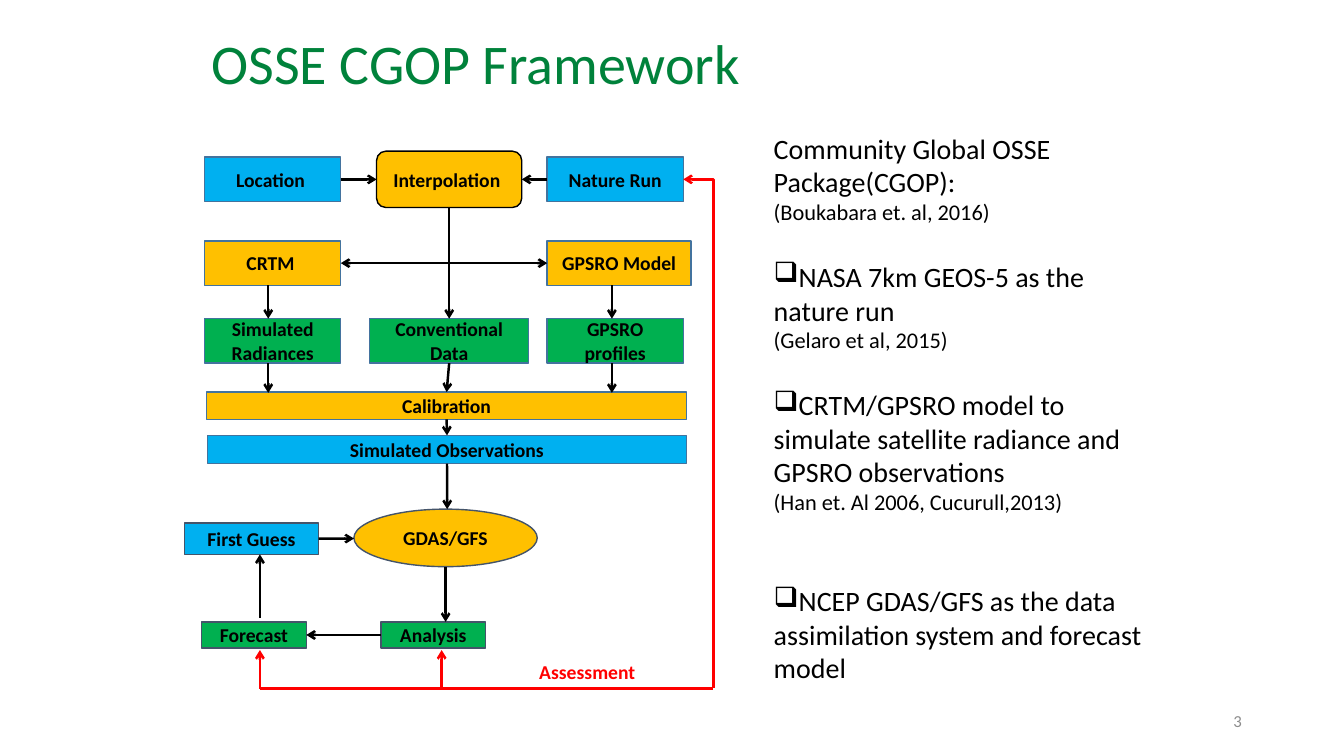
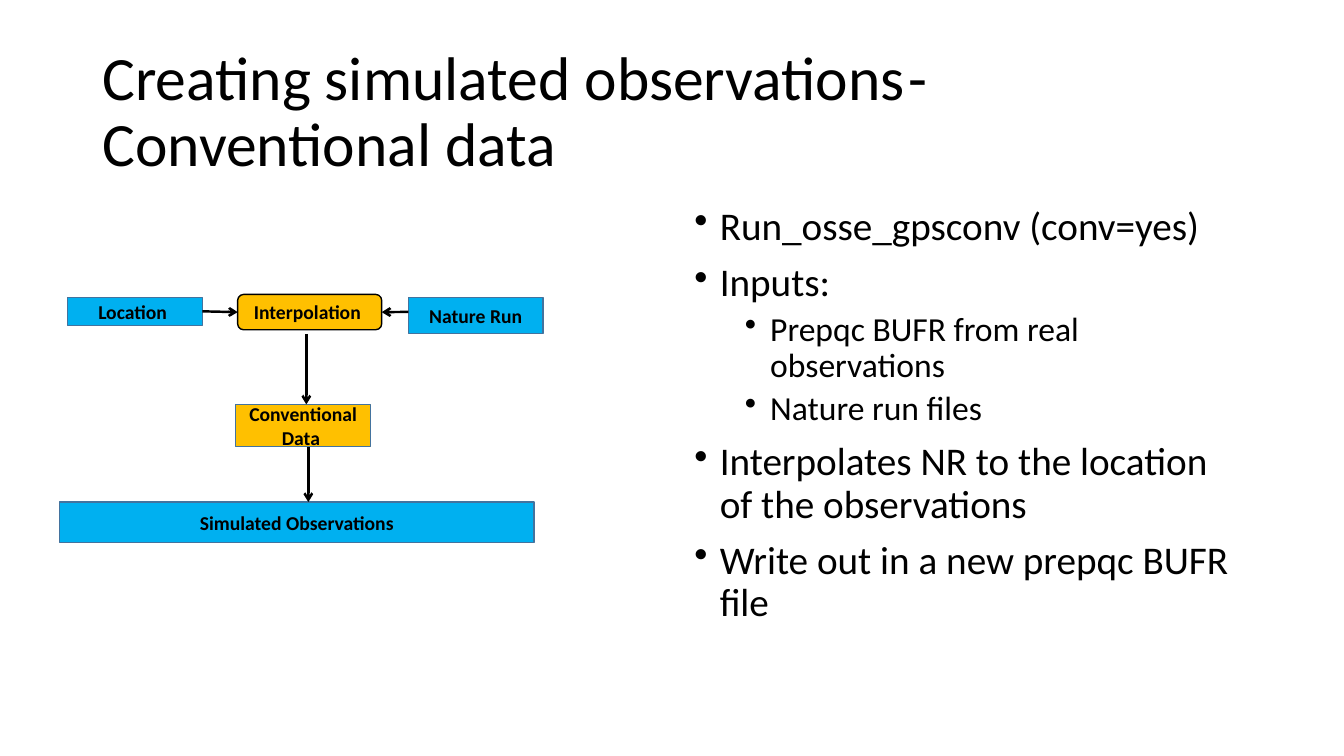
from dataclasses import dataclass
from typing import NamedTuple

from lxml import etree
from pptx import Presentation
from pptx.dml.color import RGBColor
from pptx.enum.shapes import MSO_CONNECTOR, MSO_SHAPE
from pptx.enum.text import MSO_ANCHOR, PP_ALIGN
from pptx.oxml.ns import qn
from pptx.shapes.autoshape import Shape
from pptx.shapes.connector import Connector
from pptx.slide import Slide
from pptx.text.text import TextFrame
from pptx.util import Cm, Pt

RECTANGLE = MSO_SHAPE.RECTANGLE
ROUNDED = MSO_SHAPE.ROUNDED_RECTANGLE
OVAL = MSO_SHAPE.OVAL
STRAIGHT = MSO_CONNECTOR.STRAIGHT
ELBOW = MSO_CONNECTOR.ELBOW
LEFT, CENTER, RIGHT = PP_ALIGN.LEFT, PP_ALIGN.CENTER, PP_ALIGN.RIGHT
TOP, MIDDLE = MSO_ANCHOR.TOP, MSO_ANCHOR.MIDDLE

FONT = "Calibri"
BLACK = "000000"
RED = "FF0000"
TITLE_GREEN = "00823B"
NUMBER_GRAY = "8C8C8C"
BLUE = "00B0F0"
AMBER = "FFC000"
GREEN = "00B050"
STEEL = "43739E"
SLATE = "44546A"

TOP_SIDE, LEFT_SIDE, BOTTOM_SIDE, RIGHT_SIDE = range(4)
BLANK_LAYOUT = 6
LABEL_SIZE = 14
EMPTY_LINE = 24.4  # height of one 20 pt line, in points


class Area(NamedTuple):
    """A place on the slide, in centimetres."""
    left: float
    top: float
    width: float
    height: float


class Point(NamedTuple):
    x: float
    y: float


class Joint(NamedTuple):
    """The middle of one side of a named box."""
    box: str
    side: int


@dataclass(frozen=True)
class TextLine:
    text: str
    size: float
    color: str = BLACK
    bold: bool = False
    alignment: PP_ALIGN = LEFT
    bullet: str = ""
    margin: float = 0
    hanging: float = 0
    space_before: float = 0
    line_spacing: float = 1.0


@dataclass(frozen=True)
class Box:
    label: str
    area: Area
    fill: str
    outline: str = STEEL
    kind: MSO_SHAPE = RECTANGLE


@dataclass(frozen=True)
class Link:
    start: Point | Joint
    end: Point | Joint
    color: str = BLACK
    start_arrow: bool = False
    end_arrow: bool = True
    kind: MSO_CONNECTOR = STRAIGHT


def rgb(color: str) -> RGBColor:
    return RGBColor.from_string(color)


def write_text(frame: TextFrame, lines: list[TextLine], anchor: MSO_ANCHOR) -> None:
    frame.word_wrap = True
    frame.vertical_anchor = anchor
    for index, line in enumerate(lines):
        paragraph = frame.add_paragraph() if index else frame.paragraphs[0]
        paragraph.text = line.text
        paragraph.alignment = line.alignment
        paragraph.line_spacing = line.line_spacing
        paragraph.space_before = Pt(line.space_before)
        paragraph.font.name = FONT
        paragraph.font.size = Pt(line.size)
        paragraph.font.bold = line.bold
        paragraph.font.color.rgb = rgb(line.color)
        if line.bullet:
            properties = paragraph._p.get_or_add_pPr()
            properties.set("marL", str(Cm(line.margin)))
            properties.set("indent", str(-Cm(line.hanging)))
            bullet = etree.Element(qn("a:buChar"), char=line.bullet)
            properties.insert_element_before(bullet, "a:tabLst", "a:defRPr", "a:extLst")


def add_text(slide: Slide, area: Area, lines: list[TextLine],
             anchor: MSO_ANCHOR = TOP) -> None:
    shape = slide.shapes.add_textbox(*map(Cm, area))
    write_text(shape.text_frame, lines, anchor)


def add_title(slide: Slide, area: Area, text: str, size: float, color: str) -> None:
    add_text(slide, area, [TextLine(text, size, color, line_spacing=0.9)], MIDDLE)


def add_box(slide: Slide, box: Box) -> Shape:
    shape = slide.shapes.add_shape(box.kind, *map(Cm, box.area))
    shape.shadow.inherit = False
    shape.fill.solid()
    shape.fill.fore_color.rgb = rgb(box.fill)
    shape.line.color.rgb = rgb(box.outline)
    shape.line.width = Pt(1)
    lines = [TextLine(text, LABEL_SIZE, bold=True, alignment=CENTER)
             for text in box.label.split("\n")]
    write_text(shape.text_frame, lines, MIDDLE)
    return shape


def style_connector(connector: Connector, link: Link) -> None:
    connector.line.color.rgb = rgb(link.color)
    connector.line.width = Pt(1.75)
    properties = connector._element.spPr
    outline = properties.find(qn("a:ln"))
    if link.start_arrow:
        etree.SubElement(outline, qn("a:headEnd"), type="arrow")
    if link.end_arrow:
        etree.SubElement(outline, qn("a:tailEnd"), type="arrow")
    etree.SubElement(properties, qn("a:effectLst"))
    if link.kind == ELBOW:  # a single bend
        properties.find(qn("a:prstGeom")).set("prst", "bentConnector2")


def add_link(slide: Slide, link: Link, shapes: dict[str, Shape]) -> None:
    origin = Point(0, 0)
    start = link.start if isinstance(link.start, Point) else origin
    end = link.end if isinstance(link.end, Point) else origin
    connector = slide.shapes.add_connector(link.kind, *map(Cm, start + end))
    if isinstance(link.start, Joint):
        connector.begin_connect(shapes[link.start.box], link.start.side)
    if isinstance(link.end, Joint):
        connector.end_connect(shapes[link.end.box], link.end.side)
    style_connector(connector, link)


def add_diagram(slide: Slide, boxes: list[Box], links: list[Link]) -> None:
    """Draw the boxes, then the links, which find boxes by their label."""
    shapes = {box.label: add_box(slide, box) for box in boxes}
    for link in links:
        add_link(slide, link, shapes)


LOCATION, INTERPOLATION, NATURE_RUN = "Location ", "Interpolation ", "Nature Run"
CRTM, GPSRO_MODEL = "CRTM ", "GPSRO Model"
CONVENTIONAL = "Conventional\nData"
CALIBRATION, SIMULATED = "Calibration", "Simulated Observations"
FIRST_GUESS, FORECAST, ANALYSIS = "First Guess", "Forecast", "Analysis"


def framework_boxes() -> list[Box]:
    left, right, width, height = 5.16, 13.79, 3.43, 1.12
    input_top, model_top, data_top, cycle_top = 3.96, 6.07, 8.03, 15.67
    return [
        Box(FIRST_GUESS, Area(4.65, 13.18, 3.38, 0.79), BLUE, SLATE),
        Box("GDAS/GFS", Area(8.92, 12.83, 4.62, 1.45), AMBER, SLATE, OVAL),
        Box(NATURE_RUN, Area(right, input_top, width, height), BLUE),
        Box(INTERPOLATION, Area(9.49, 3.81, 3.66, 1.42), AMBER, BLACK, ROUNDED),
        Box(LOCATION, Area(left, input_top, width, height), BLUE),
        Box(GPSRO_MODEL, Area(right, model_top, 3.63, height), AMBER),
        Box(CRTM, Area(left, model_top, width, height), AMBER),
        Box("GPSRO profiles", Area(right, data_top, width, height), GREEN),
        Box("Simulated Radiances", Area(left, data_top, width, height), GREEN),
        Box(CONVENTIONAL, Area(9.32, data_top, 4, height), GREEN),
        Box(CALIBRATION, Area(5.21, 9.88, 12.09, 0.69), AMBER),
        Box(SIMULATED, Area(5.23, 10.97, 12.07, 0.71), BLUE),
        Box(FORECAST, Area(5.08, cycle_top, 2.64, 0.66), GREEN, SLATE),
        Box(ANALYSIS, Area(9.6, cycle_top, 2.64, 0.66), GREEN, SLATE),
    ]


def framework_links() -> list[Link]:
    forecast_x, analysis_x, red_x, red_y = 6.55, 11.13, 17.98, 17.35
    links = [
        Link(Joint(FIRST_GUESS, RIGHT_SIDE), Point(8.92, 13.57)),
        Link(Joint(SIMULATED, BOTTOM_SIDE), Point(11.27, 12.83)),
        Link(Point(11.23, 14.28), Point(11.23, 15.67)),
        Link(Joint(NATURE_RUN, LEFT_SIDE), Joint(INTERPOLATION, RIGHT_SIDE)),
        Link(Joint(LOCATION, RIGHT_SIDE), Joint(INTERPOLATION, LEFT_SIDE)),
        Link(Joint(INTERPOLATION, BOTTOM_SIDE), Joint(CONVENTIONAL, TOP_SIDE)),
        Link(Joint(CRTM, RIGHT_SIDE), Joint(GPSRO_MODEL, LEFT_SIDE), start_arrow=True),
        Link(Joint(CONVENTIONAL, BOTTOM_SIDE), Joint(CALIBRATION, TOP_SIDE)),
        Link(Joint(CALIBRATION, BOTTOM_SIDE), Joint(SIMULATED, TOP_SIDE)),
        Link(Joint(ANALYSIS, LEFT_SIDE), Joint(FORECAST, RIGHT_SIDE)),
        Link(Point(forecast_x, 15.57), Point(forecast_x, 13.97)),
        Link(Point(forecast_x, red_y), Point(red_x, red_y), RED, end_arrow=False),
        Link(Point(17.22, 4.52), Point(red_x, red_y), RED, True, False, ELBOW),
    ]
    for x in (6.76, 15.42):
        for top, bottom in ((7.19, 8.03), (9.15, 9.9)):
            links.append(Link(Point(x, top), Point(x, bottom)))
    for x in (forecast_x, analysis_x):
        links.append(Link(Point(x, red_y), Point(x, 16.38), RED))
    return links


def build_framework(slide: Slide) -> None:
    add_title(slide, Area(5.08, 0.2, 24.13, 2.97), "OSSE CGOP Framework", 40, TITLE_GREEN)
    add_text(slide, Area(23.93, 17.65, 7.62, 1.02),
             [TextLine("3", 12, NUMBER_GRAY, alignment=RIGHT)], MIDDLE)
    add_text(slide, Area(19.25, 3.18, 9.96, 14.27), [
        TextLine("Community Global OSSE Package(CGOP):", 20),
        TextLine("(Boukabara et. al, 2016)", 16),
        TextLine("NASA 7km GEOS-5 as the nature run", 20,
                 bullet="❑", space_before=EMPTY_LINE),
        TextLine("(Gelaro et al, 2015)", 16),
        TextLine("CRTM/GPSRO model to simulate satellite radiance and GPSRO observations",
                 20, bullet="❑", space_before=EMPTY_LINE),
        TextLine("(Han et. Al 2006, Cucurull,2013)", 16),
        TextLine("NCEP GDAS/GFS as the data assimilation system and forecast model",
                 20, bullet="❑", space_before=2 * EMPTY_LINE),
    ])
    add_diagram(slide, framework_boxes(), framework_links())
    add_text(slide, Area(13.34, 16.51, 4.24, 0.86),
             [TextLine("Assessment", LABEL_SIZE, RED, bold=True)])


def outline_line(text: str, level: int = 0) -> TextLine:
    return TextLine(text, 28 - 4 * level, bullet="•", margin=0.64 + 1.27 * level,
                    hanging=0.64, space_before=10 - 5 * level, line_spacing=0.9)


def build_conventional_data(slide: Slide) -> None:
    add_title(slide, Area(2.33, 1.02, 29.21, 3.68),
              "Creating simulated observations\t- Conventional data", 44, BLACK)
    add_text(slide, Area(17.25, 5.08, 14.3, 12.09), [
        outline_line("Run_osse_gpsconv (conv=yes)"),
        outline_line("Inputs:"),
        outline_line("Prepqc BUFR from real observations", 1),
        outline_line("Nature run files", 1),
        outline_line("Interpolates NR to the location of the observations"),
        outline_line("Write out in a new prepqc BUFR file"),
    ])
    boxes = [
        Box(NATURE_RUN, Area(10.29, 7.49, 3.4, 0.91), BLUE),
        Box(INTERPOLATION, Area(5.99, 7.42, 3.63, 0.89), AMBER, BLACK, ROUNDED),
        Box(LOCATION, Area(1.7, 7.49, 3.4, 0.71), BLUE),
        Box("Conventional Data ", Area(5.94, 10.19, 3.4, 1.07), AMBER),
        Box(SIMULATED, Area(1.5, 12.65, 11.96, 1.02), BLUE),
    ]
    links = [
        Link(Point(10.29, 7.86), Joint(INTERPOLATION, RIGHT_SIDE)),
        Link(Joint(LOCATION, RIGHT_SIDE), Joint(INTERPOLATION, LEFT_SIDE)),
        Link(Point(7.72, 8.41), Point(7.72, 10.19)),
        Link(Point(7.77, 11.26), Point(7.77, 12.65)),
    ]
    add_diagram(slide, boxes, links)


def main() -> None:
    presentation = Presentation()
    presentation.slide_width = Cm(33.87)
    presentation.slide_height = Cm(19.05)
    for build in (build_framework, build_conventional_data):
        build(presentation.slides.add_slide(presentation.slide_layouts[BLANK_LAYOUT]))
    presentation.save("out.pptx")


if __name__ == "__main__":
    main()
